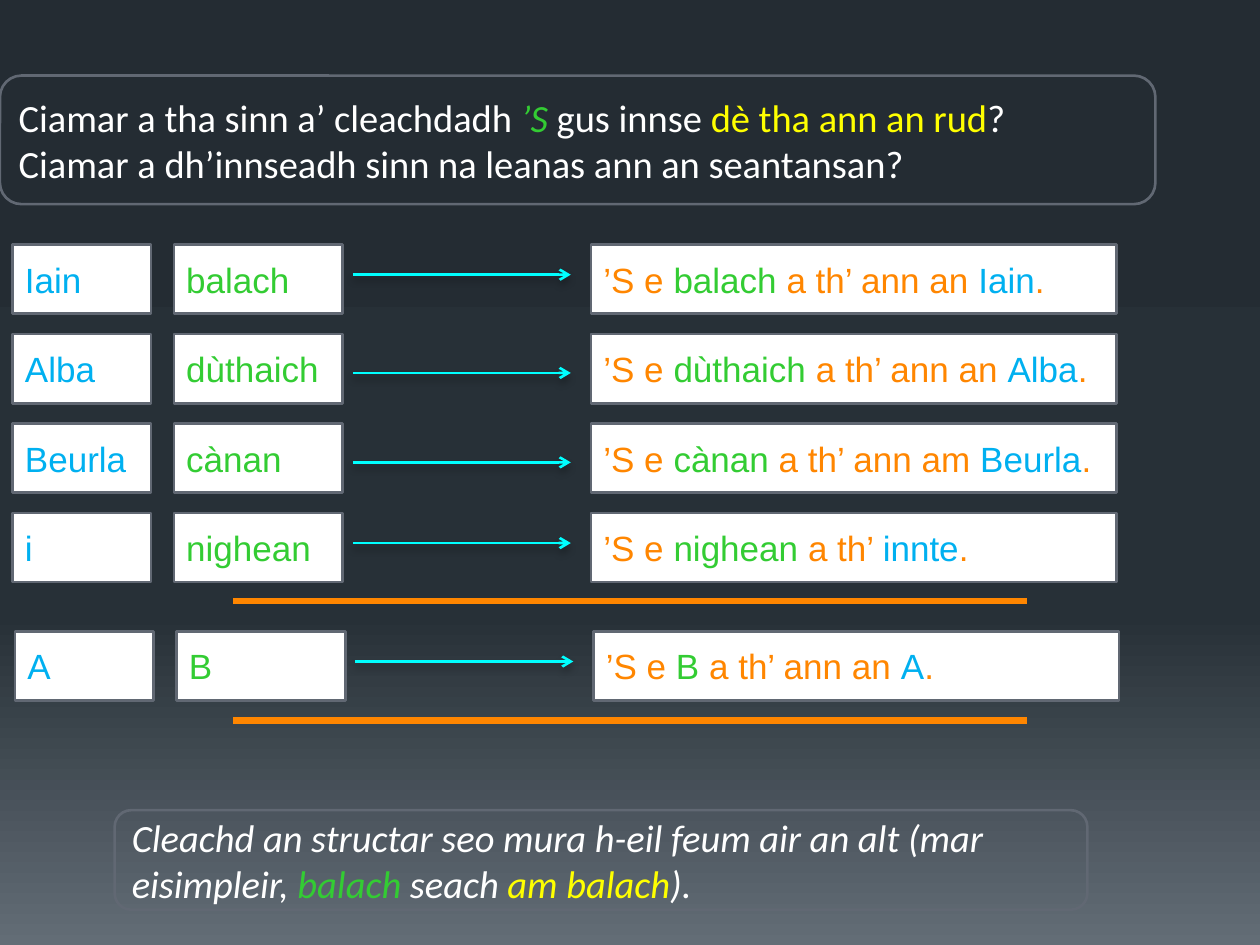
from copy import deepcopy

from lxml import etree
from pptx import Presentation
from pptx import util as u
from pptx.dml.color import RGBColor
from pptx.enum import shapes, text
from pptx.oxml.ns import qn

WHITE = RGBColor(0xFF, 0xFF, 0xFF)
GREY = RGBColor(0x61, 0x68, 0x73)
GREEN = RGBColor(0x33, 0xCC, 0x33)
YELLOW = RGBColor(0xFF, 0xFF, 0x00)
ORANGE = RGBColor(0xFF, 0x86, 0x00)
BLUE = RGBColor(0x00, 0xB0, 0xF0)
CYAN = RGBColor(0x00, 0xFF, 0xFF)
SHADES = [(0, RGBColor(0x24, 0x2C, 0x33)),
          (0.65, RGBColor(0x27, 0x30, 0x37)),
          (1, RGBColor(0x63, 0x6D, 0x76))]

ROUND = shapes.MSO_SHAPE.ROUNDED_RECTANGLE
CARD = shapes.MSO_SHAPE.FLOWCHART_PROCESS


def paint_back(slide):
    """Vertical gradient behind the whole slide."""
    fill = slide.background.fill
    fill.gradient()
    fill.gradient_angle = 270
    stops = slide.element.find(".//" + qn("a:gsLst"))
    stops.append(deepcopy(stops[-1]))
    for stop, (place, shade) in zip(fill.gradient_stops, SHADES):
        stop.position = place
        stop.color.rgb = shade


def add_box(slide, kind, box, paras, font, size, fill=None, slant=False):
    """Framed text; each run is (words, colour) or (words, colour, italic)."""
    shape = slide.shapes.add_shape(kind, *map(u.Inches, box))
    shape.shadow.inherit = False
    shape.line.color.rgb = GREY
    shape.line.width = u.Pt(1.5)
    if fill is None:
        shape.fill.background()
    else:
        shape.fill.solid()
        shape.fill.fore_color.rgb = fill
    frame = shape.text_frame
    frame.word_wrap = True
    frame.vertical_anchor = text.MSO_ANCHOR.MIDDLE
    for i, runs in enumerate(paras):
        para = frame.add_paragraph() if i else frame.paragraphs[0]
        para.alignment = text.PP_ALIGN.LEFT
        for words, colour, *style in runs:
            run = para.add_run()
            run.text = words
            run.font.name = font
            run.font.size = u.Pt(size)
            run.font.italic = style[0] if style else slant
            run.font.color.rgb = colour


def add_line(slide, left, right, y, colour, width, arrow=False):
    """Level line, with a head and a soft shadow if it is an arrow."""
    line = slide.shapes.add_connector(
        shapes.MSO_CONNECTOR.STRAIGHT,
        *map(u.Inches, (left, y, right, y)))
    line.line.color.rgb = colour
    line.line.width = u.Pt(width)
    props = line.element.spPr
    effect = etree.SubElement(props, qn("a:effectLst"))
    if arrow:
        etree.SubElement(props.find(qn("a:ln")), qn("a:tailEnd"), type="arrow")
        shade = etree.SubElement(
            effect, qn("a:outerShdw"), blurRad=str(u.Pt(4)),
            dist=str(u.Pt(3)), dir="5400000", rotWithShape="0")
        black = etree.SubElement(shade, qn("a:srgbClr"), val="000000")
        etree.SubElement(black, qn("a:alpha"), val="28000")


def add_row(slide, left, top, drop, name, noun, link, end):
    """Name and noun cards, an arrow, and the sentence they make."""
    sentence = [("’S e ", ORANGE), (noun, GREEN), (link, ORANGE),
                (end, BLUE), (".", ORANGE)]
    cards = [(0, 1.1, [(name, BLUE)]),
             (1.28, 1.34, [(noun, GREEN)]),
             (4.59, 4.17, sentence)]
    for shift, width, runs in cards:
        add_box(slide, CARD, (left + shift, top, width, 0.55), [runs],
                "Arial", 20, WHITE)
    add_line(slide, left + 2.7, left + 4.43, top + drop, CYAN, 1.5, True)


def add_rows(slide, left, top):
    """Four examples, then the pattern between two rules."""
    rows = [("Iain", "balach", " a th’ ann an ", "Iain", 0.24),
            ("Alba", "dùthaich", " a th’ ann an ", "Alba", 0.31),
            ("Beurla", "cànan", " a th’ ann am ", "Beurla", 0.31),
            ("i", "nighean", " a th’ ", "innte", 0.24)]
    for i, (name, noun, link, end, drop) in enumerate(rows):
        add_row(slide, left, top + 0.71 * i, drop, name, noun, link, end)
    add_row(slide, left + 0.02, top + 3.07, 0.24,
            "A", "B", " a th’ ann an ", "A")
    for y in (top + 2.83, top + 3.78):
        add_line(slide, 1.85, 8.15, y, ORANGE, 3.75)


def add_ask(slide, box):
    """Opening questions."""
    add_box(slide, ROUND, box, [
        [("Ciamar a tha sinn a’ cleachdadh ", WHITE), ("’S ", GREEN, True),
         ("gus innse ", WHITE), ("dè tha ann an rud", YELLOW), ("?", WHITE)],
        [("Ciamar a dh’innseadh sinn na leanas ann an seantansan?", WHITE)],
    ], "Calibri", 22)


def add_tip(slide, box):
    """Closing advice."""
    add_box(slide, ROUND, box, [
        [("Cleachd an structar seo mura h-eil feum air an alt "
          "(mar eisimpleir, ", WHITE), ("balach ", GREEN),
         ("seach ", WHITE), ("am balach", YELLOW), (").", WHITE)],
    ], "Calibri", 22, slant=True)


def main():
    deck = Presentation()
    deck.slide_width, deck.slide_height = u.Inches(10), u.Inches(7.5)
    slide = deck.slides.add_slide(deck.slide_layouts[6])
    paint_back(slide)
    add_ask(slide, (0, 0.6, 9.17, 1.02))
    add_rows(slide, 0.1, 1.94)
    add_tip(slide, (0.91, 6.43, 7.72, 0.79))
    deck.save("out.pptx")


if __name__ == "__main__":
    main()
